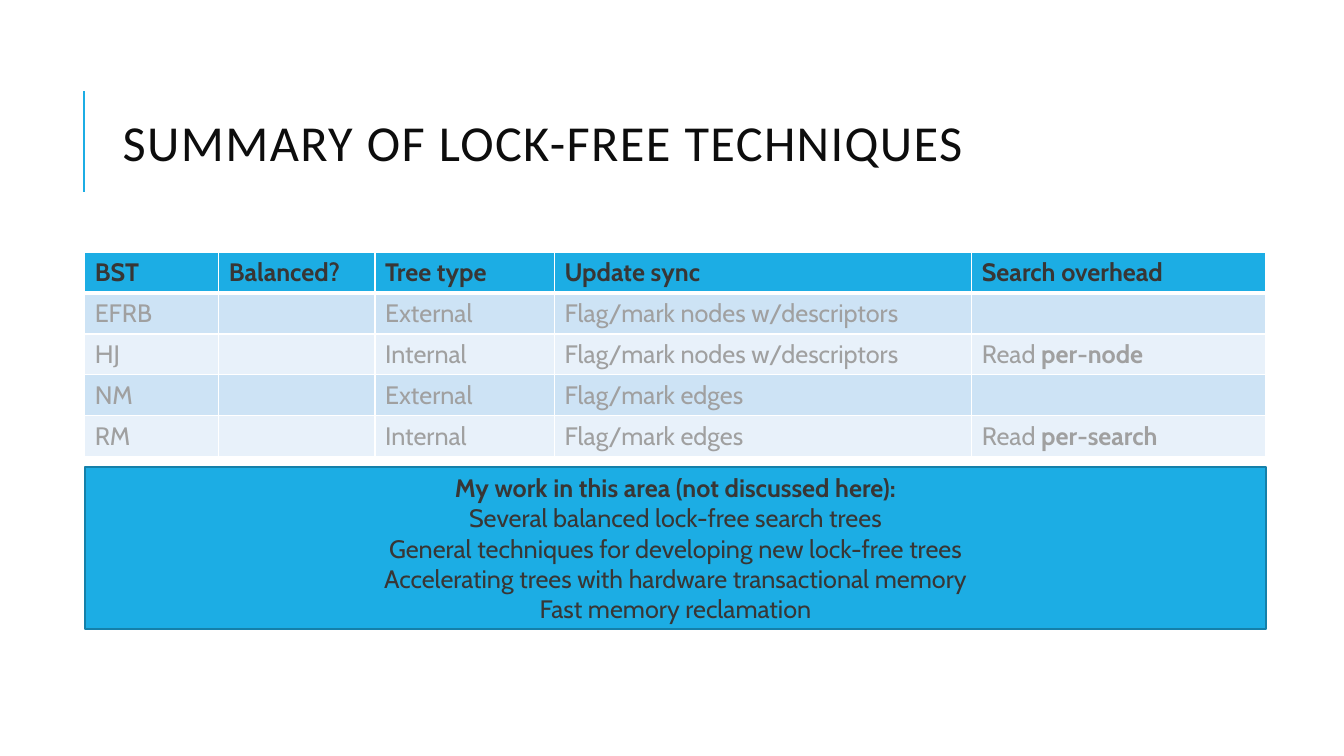
from lxml import etree
from pptx import Presentation
from pptx.dml.color import RGBColor
from pptx.enum import shapes, text
from pptx.oxml import ns
from pptx.util import Pt

# Content: *stars* mark bold words
TITLE = "SUMMARY OF LOCK-FREE TECHNIQUES"
ROWS = [
    ("*BST*", "*Balanced?*", "*Tree type*", "*Update sync*", "*Search overhead*"),
    ("EFRB", "", "External", "Flag/mark nodes w/descriptors", ""),
    ("HJ", "", "Internal", "Flag/mark nodes w/descriptors", "Read *per-node*"),
    ("NM", "", "External", "Flag/mark edges", ""),
    ("RM", "", "Internal", "Flag/mark edges", "Read *per-search*"),
]
MY_WORK = [
    "*My work in this area (not discussed here):*",
    "Several balanced lock-free search trees",
    "General techniques for developing new lock-free trees",
    "Accelerating trees with hardware transactional memory",
    "Fast memory reclamation",
]

# Style and layout, in points
WHITE, BLACK, DARK, GREY = "FFFFFF", "0D0D0D", "383635", "A0A0A0"
BLUE, BLUE_EDGE, BANDS = "1CADE4", "1580A9", ("E8F1FA", "CDE3F5")
LEFT, TABLE_TOP, ROW_H = 60.5, 180.2, 29.2
COL_W = (95.8, 111.6, 128.2, 298.1, 210.2)
BOX_TOP, BOX_H = 333.4, 115.9


def color(value):
    return RGBColor.from_string(value)


def write(tf, lines, size=18, font="Cabin", ink=DARK, align=None,
          spacing=None, tracking=None):
    """Fill a text frame, one paragraph per line."""
    for i, line in enumerate(lines):
        p = tf.add_paragraph() if i else tf.paragraphs[0]
        p.alignment, p.line_spacing = align, spacing
        p.font.size = Pt(size)
        for j, part in enumerate(line.split("*")):
            if not part:
                continue
            r = p.add_run()
            r.text = part
            r.font.size, r.font.name, r.font.bold = Pt(size), font, j % 2 == 1
            r.font.color.rgb = color(ink)
            if tracking:
                r.font._element.set("spc", str(tracking * 100))


def border(cell, side, width):
    ln = etree.SubElement(cell._tc.get_or_add_tcPr(), ns.qn("a:ln" + side),
                          w=str(Pt(width)))
    fill = etree.SubElement(ln, ns.qn("a:solidFill"))
    etree.SubElement(fill, ns.qn("a:srgbClr"), val=WHITE)


prs = Presentation()
prs.slide_width, prs.slide_height = Pt(960), Pt(540)
s = prs.slides.add_slide(prs.slide_layouts[6])
s.background.fill.solid()
s.background.fill.fore_color.rgb = color(WHITE)

# Title with its rule
rule = s.shapes.add_connector(shapes.MSO_CONNECTOR.STRAIGHT,
                              Pt(60), Pt(136.8), Pt(60), Pt(64.8))
rule.line.color.rgb, rule.line.width = color(BLUE), Pt(1.5)
etree.SubElement(rule._element.spPr, ns.qn("a:effectLst"))

tf = s.shapes.add_textbox(Pt(80.6), Pt(46.1), Pt(765.4), Pt(118.1)).text_frame
tf.word_wrap, tf.vertical_anchor = True, text.MSO_ANCHOR.MIDDLE
write(tf, [TITLE], size=36, font="Calibri", ink=BLACK, spacing=0.8, tracking=1)

# Comparison table
table = s.shapes.add_table(len(ROWS), len(COL_W), Pt(LEFT), Pt(TABLE_TOP),
                           Pt(sum(COL_W)), Pt(ROW_H * len(ROWS))).table
for col, width in zip(table.columns, COL_W):
    col.width = Pt(width)
for i, row in enumerate(ROWS):
    table.rows[i].height = Pt(ROW_H)
    for j, entry in enumerate(row):
        cell = table.cell(i, j)
        for side in "LRTB":
            heavy = (i, side) in ((0, "B"), (1, "T"))
            border(cell, side, 3 if heavy else 1)
        cell.fill.solid()
        cell.fill.fore_color.rgb = color(BANDS[i % 2] if i else BLUE)
        write(cell.text_frame, [entry], ink=GREY if i else DARK)

# Box about further work
box = s.shapes.add_shape(shapes.MSO_SHAPE.RECTANGLE, Pt(LEFT), Pt(BOX_TOP),
                         Pt(sum(COL_W)), Pt(BOX_H))
box.shadow.inherit = False
box.fill.solid()
box.fill.fore_color.rgb = color(BLUE)
box.line.color.rgb, box.line.width = color(BLUE_EDGE), Pt(1.25)
tf = box.text_frame
tf.word_wrap, tf.vertical_anchor = True, text.MSO_ANCHOR.MIDDLE
write(tf, MY_WORK, align=text.PP_ALIGN.CENTER)

prs.save("out.pptx")
